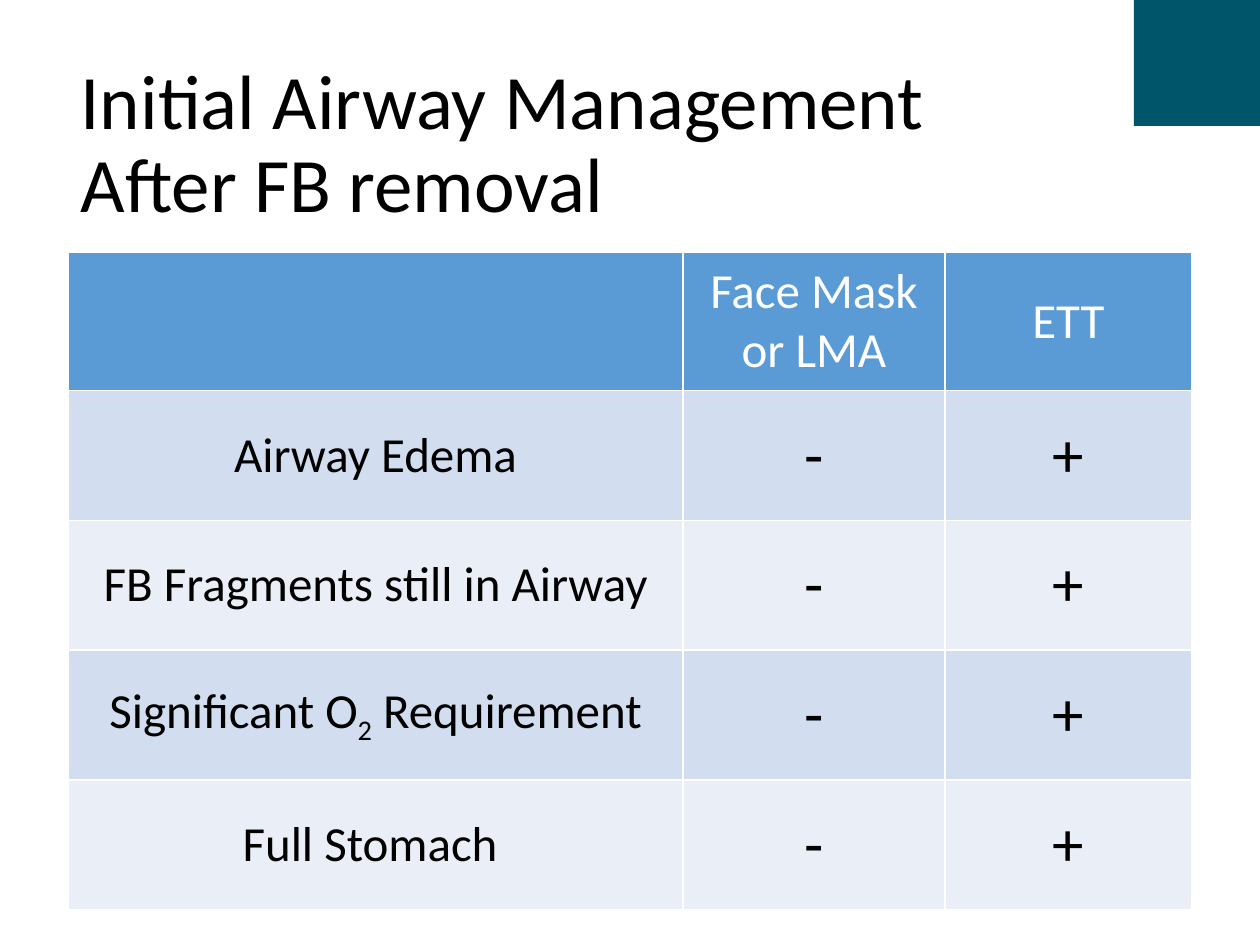
from dataclasses import dataclass

from pptx import Presentation
from pptx.dml.color import RGBColor
from pptx.enum.text import MSO_ANCHOR, MSO_AUTO_SIZE, PP_ALIGN
from pptx.util import Inches, Pt

HUES = {"teal": "00556A", "head": "5B9BD5", "odd": "D2DEEF",
        "even": "EAEFF7", "white": "FFFFFF", "black": "000000"}


@dataclass
class Row:
    label: str  # text between underscores is subscript
    mask: str
    tube: str
    high: float = 1.03


ROWS = [
    Row("", "Face Mask or LMA", "ETT", 1.1),
    Row("Airway Edema", "-", "+"),
    Row("FB Fragments still in Airway", "-", "+"),
    Row("Significant O_2_ Requirement", "-", "+"),
    Row("Full Stomach ", "-", "+"),
]
COLS = [4.88, 2.08, 1.96]


def color(name: str) -> RGBColor:
    return RGBColor.from_string(HUES[name])


def style(font, hue: str, size: int) -> None:
    for key, val in {"name": "Calibri", "size": Pt(size), "bold": False}.items():
        setattr(font, key, val)
    font.color.rgb = color(hue)


def curve(a, b, c, d, steps: int = 60) -> list:
    """Points along a cubic curve, without its start."""
    spots = []
    for i in range(1, steps + 1):
        t = i / steps
        u = 1 - t
        spots.append(tuple(u**3 * p + 3 * u * u * t * q + 3 * u * t * t * r + t**3 * s
                           for p, q, r, s in zip(a, b, c, d)))
    return spots


def draw_swoosh(slide) -> None:
    edge = (9.99, 1.29)
    spots = [(10, 0)]
    spots += curve((10, 0), (10, 0.14), (9.99, 1.15), edge)
    spots += curve(edge, (9.98, 0), (3.36, 0.1), (0.03, 0.1))
    pen = slide.shapes.build_freeform(0, 0, scale=Inches(1))
    pen.add_line_segments(spots, close=True)
    shape = pen.convert_to_shape()
    shape.shadow.inherit = False
    shape.fill.solid()
    shape.fill.fore_color.rgb = color("teal")
    shape.line.fill.background()
    # Send behind the title
    shape.element.getparent().insert(2, shape.element)


def fill_cell(cell, text: str, fill: str, hue: str, size: int) -> None:
    cell.fill.solid()
    cell.fill.fore_color.rgb = color(fill)
    cell.vertical_anchor = MSO_ANCHOR.MIDDLE
    para = cell.text_frame.paragraphs[0]
    para.alignment = PP_ALIGN.CENTER
    style(para.font, hue, size)
    for i, part in enumerate(text.split("_") if text else []):
        run = para.add_run()
        run.text = part
        style(run.font, hue, size)
        if i % 2:
            run.font._element.set("baseline", "-25000")


def draw_table(slide) -> None:
    high = sum(row.high for row in ROWS)
    table = slide.shapes.add_table(len(ROWS), len(COLS), Inches(0.54), Inches(2),
                                   Inches(sum(COLS)), Inches(high)).table
    for col, wide in zip(table.columns, COLS):
        col.width = Inches(wide)
    for r, row in enumerate(ROWS):
        table.rows[r].height = Inches(row.high)
        fill = "head" if r == 0 else ("odd" if r % 2 else "even")
        hue = "black" if r else "white"
        for c, text in enumerate((row.label, row.mask, row.tube)):
            fill_cell(table.cell(r, c), text, fill, hue, 36 if r and c else 28)


def draw_title(slide) -> None:
    title = slide.shapes.title
    place = {"left": 0.54, "top": 0.4, "width": 7.54, "height": 1.52}
    for key, val in place.items():
        setattr(title, key, Inches(val))
    frame = title.text_frame
    frame.text = "Initial Airway Management After FB removal"
    form = {"word_wrap": True, "auto_size": MSO_AUTO_SIZE.NONE,
            "vertical_anchor": MSO_ANCHOR.MIDDLE}
    for key, val in form.items():
        setattr(frame, key, val)
    para = frame.paragraphs[0]
    para.alignment = PP_ALIGN.LEFT
    para.line_spacing = 0.9
    style(para.runs[0].font, "black", 44)


def main() -> None:
    deck = Presentation()
    deck.slide_width, deck.slide_height = Inches(10), Inches(7.5)
    slide = deck.slides.add_slide(deck.slide_layouts[5])
    draw_swoosh(slide)
    draw_title(slide)
    draw_table(slide)
    deck.save("out.pptx")


if __name__ == "__main__":
    main()
